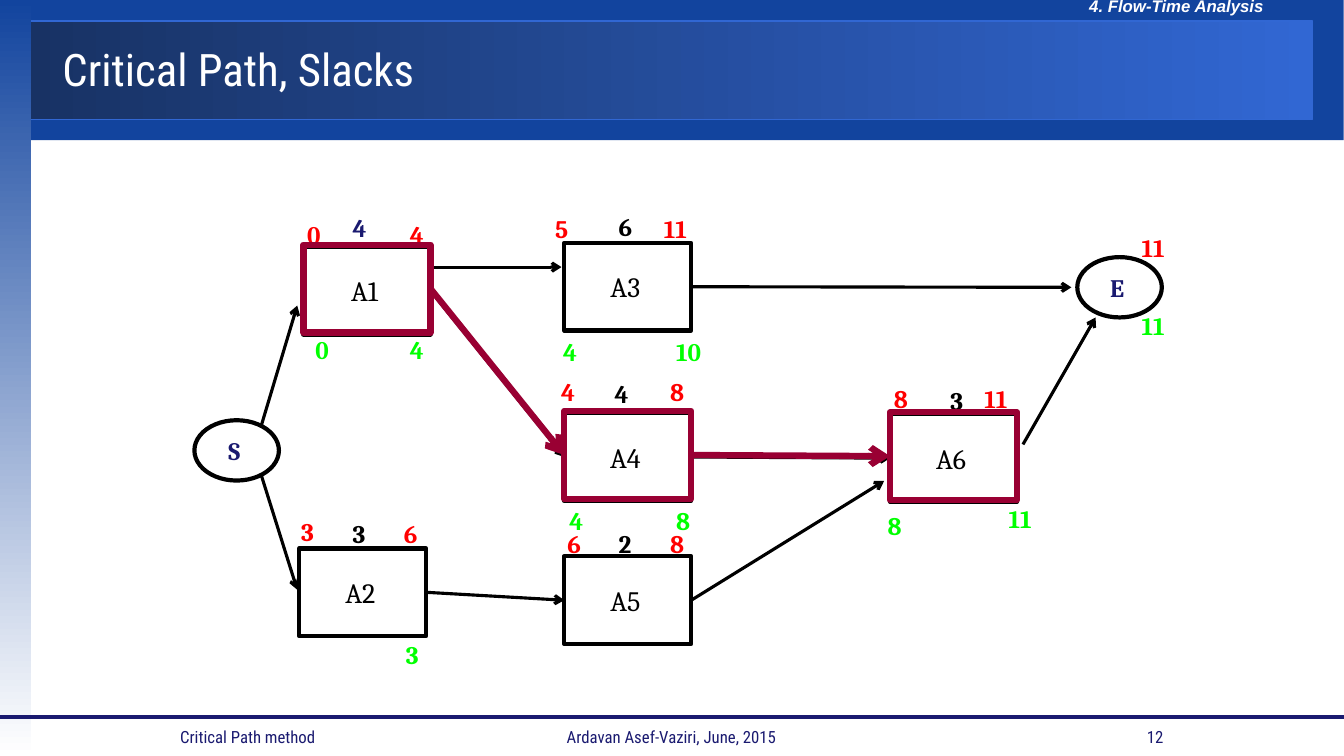
from lxml.etree import SubElement
from pptx import Presentation
from pptx.dml.color import RGBColor
from pptx.enum.shapes import MSO_CONNECTOR, MSO_SHAPE
from pptx.enum.text import MSO_ANCHOR, PP_ALIGN
from pptx.oxml.ns import qn
from pptx.util import Cm, Pt

BLUE = RGBColor(0x12, 0x44, 0x9E)
BANNER_DARK = RGBColor(0x18, 0x32, 0x64)
BANNER_LIGHT = RGBColor(0x31, 0x67, 0xD3)
NAVY = RGBColor(0x1A, 0x1A, 0x70)
WHITE = RGBColor(0xFF, 0xFF, 0xFF)
BLACK = RGBColor(0x00, 0x00, 0x00)
RED = RGBColor(0xFF, 0x00, 0x00)
GREEN = RGBColor(0x00, 0xFF, 0x00)
CRIMSON = RGBColor(0x99, 0x00, 0x33)

BODY_FONT = "Cambria"
TITLE_FONT = "Roboto Condensed"
BOX_SIZE = (3.2, 2.21)
EVENT_SIZE = (2.13, 1.52)
CRITICAL_RISE = 0.05

# Left and top of each activity and event, in cm
ACTIVITIES = {
    "A1": (7.65, 6.22), "A3": (14.22, 6.12), "A4": (14.22, 10.41),
    "A6": (22.43, 10.44), "A5": (14.22, 14.02), "A2": (7.54, 13.82),
}
CRITICAL_PATH = ["A1", "A4", "A6"]
EVENTS = {"S": (4.9, 10.59), "E": (27.15, 6.48)}

# Numbers around the activities: text, left, top
DURATIONS = [("3", 8.64, 12.93), ("6", 15.34, 5.21), ("4", 15.24, 9.42),
             ("2", 15.34, 13.18), ("3", 23.7, 9.58)]
FIRST_DURATION = [("4", 8.64, 5.23)]
BACKWARD_TIMES = [("0", 7.7, 8.31), ("4", 10.08, 8.31), ("3", 9.98, 15.98),
                  ("4", 14.1, 12.62), ("4", 13.94, 8.36), ("10", 16.79, 8.36),
                  ("8", 16.79, 12.62), ("8", 22.12, 12.73),
                  ("11", 25.17, 12.57), ("11", 28.52, 7.7)]
FORWARD_TIMES = [("11", 28.52, 5.72), ("11", 16.48, 5.26), ("5", 13.74, 5.26),
                 ("8", 22.28, 9.53), ("8", 16.64, 9.37), ("8", 16.64, 13.18),
                 ("4", 13.89, 9.37), ("6", 14.05, 13.18), ("6", 9.93, 12.93),
                 ("3", 7.34, 12.88), ("4", 10.08, 5.41), ("0", 7.49, 5.41),
                 ("11", 24.56, 9.53)]


def format_text(text_frame, text, font, size, colour, bold=False,
                italic=False, align=PP_ALIGN.LEFT, anchor=MSO_ANCHOR.TOP):
    text_frame.text = text
    text_frame.word_wrap = True
    text_frame.vertical_anchor = anchor
    paragraph = text_frame.paragraphs[0]
    paragraph.alignment = align
    run_font = paragraph.runs[0].font
    run_font.name, run_font.size = font, Pt(size)
    run_font.bold, run_font.italic = bold, italic
    run_font.color.rgb = colour


def add_text(slide, text, left, top, width, height, *style, **options):
    shape = slide.shapes.add_textbox(Cm(left), Cm(top), Cm(width), Cm(height))
    format_text(shape.text_frame, text, *style, **options)


def add_panel(slide, left, top, width, height, colours, angle=0, line=None):
    shape = slide.shapes.add_shape(MSO_SHAPE.RECTANGLE, Cm(left), Cm(top),
                                   Cm(width), Cm(height))
    shape.shadow.inherit = False
    if len(colours) == 1:
        shape.fill.solid()
        shape.fill.fore_color.rgb = colours[0]
    else:
        shape.fill.gradient()
        shape.fill.gradient_angle = angle
        for position, (stop, colour) in enumerate(
                zip(shape.fill.gradient_stops, colours)):
            stop.position = position
            stop.color.rgb = colour
    if line is None:
        shape.line.fill.background()
    else:
        shape.line.color.rgb = line
        shape.line.width = Pt(0.75)


def add_node(slide, kind, left, top, size, colour=BLACK, line_width=3):
    shape = slide.shapes.add_shape(kind, Cm(left), Cm(top), *map(Cm, size))
    shape.shadow.inherit = False
    shape.fill.background()
    shape.line.color.rgb = colour
    shape.line.width = Pt(line_width)
    return shape


def label_node(shape, text, size, colour, bold):
    frame = shape.text_frame
    frame.margin_top = frame.margin_bottom = 0
    frame.margin_left, frame.margin_right = 0, Cm(0.12)
    format_text(frame, text, BODY_FONT, size, colour, bold,
                align=PP_ALIGN.CENTER, anchor=MSO_ANCHOR.MIDDLE)


def add_line(slide, begin, end, colour, width):
    """Each end is a point in cm, or a box: lines leave right, enter left."""
    points = [(0, 0) if hasattr(stop, "shape_id") else stop
              for stop in (begin, end)]
    line = slide.shapes.add_connector(
        MSO_CONNECTOR.STRAIGHT, *[Cm(value) for point in points for value in point])
    if hasattr(begin, "shape_id"):
        line.begin_connect(begin, 3)
    if hasattr(end, "shape_id"):
        line.end_connect(end, 1)
    line.line.color.rgb = colour
    line.line.width = Pt(width)
    SubElement(line._element.spPr, qn("a:effectLst"))
    return line


def add_arrow(slide, begin, end, colour=BLACK, width=2.25):
    arrow = add_line(slide, begin, end, colour, width)
    SubElement(arrow.line._get_or_add_ln(), qn("a:tailEnd"), type="arrow")


def add_numbers(slide, numbers, colour):
    for text, left, top in numbers:
        width = 0.86 if len(text) == 1 else 1.37
        add_text(slide, text, left, top, width, 1.02, BODY_FONT, 18, colour,
                 bold=True)


def add_frame(slide):
    # Background bands and chapter name
    add_panel(slide, 0.66, 0, 33.2, 3.53, [BLUE])
    add_panel(slide, 0.66, 0.53, 32.41, 2.49, [BANNER_DARK, BANNER_LIGHT],
              line=BANNER_LIGHT)
    add_panel(slide, 0, 0, 0.79, 19.05, [BLUE, WHITE], angle=270)
    add_text(slide, "4. Flow-Time Analysis", 27.2, -0.23, 6.5, 0.76, "Arial",
             12, WHITE, bold=True, italic=True)

    # Title, brought in front of the bands
    title = slide.shapes.title
    title.left, title.top, title.width, title.height = map(
        Cm, (1.32, 0.53, 31.47, 2.39))
    format_text(title.text_frame, "Critical Path, Slacks", TITLE_FONT, 32,
                WHITE, anchor=MSO_ANCHOR.MIDDLE)
    slide.shapes._spTree.append(title._element)

    # Footer
    add_line(slide, (0, 18.06), (33.87, 18.06), NAVY, 3)
    for text, left, width, align in [
            ("Critical Path method", 4.29, 5.92, PP_ALIGN.LEFT),
            ("Ardavan Asef-Vaziri, June, 2015", 12.9, 8.05, PP_ALIGN.CENTER),
            ("12", 23.65, 5.92, PP_ALIGN.RIGHT)]:
        add_text(slide, text, left, 18.06, width, 1.02, TITLE_FONT, 12, NAVY,
                 align=align, anchor=MSO_ANCHOR.MIDDLE)


def add_network(slide):
    # Activities and events
    boxes = {}
    for name, (left, top) in ACTIVITIES.items():
        boxes[name] = add_node(slide, MSO_SHAPE.RECTANGLE, left, top, BOX_SIZE)
        label_node(boxes[name], name, 20, BLACK, False)
    for name, (left, top) in EVENTS.items():
        event = add_node(slide, MSO_SHAPE.OVAL, left, top, EVENT_SIZE)
        label_node(event, name, 18, NAVY, True)

    # Precedence arrows
    for begin, end in [
            ((10.85, 6.73), (14.15, 6.73)),
            (boxes["A1"], boxes["A4"]),
            (boxes["A2"], boxes["A5"]),
            (boxes["A4"], boxes["A6"]),
            (boxes["A5"], (22.28, 12.12)),
            (boxes["A3"], (27, 7.24)),
            ((25.78, 11.2), (27.61, 8)),
            ((6.58, 10.74), (7.49, 7.7)),
            ((6.58, 11.96), (7.49, 14.86))]:
        add_arrow(slide, begin, end)

    # Durations and times
    for numbers, colour in [(FIRST_DURATION, NAVY), (DURATIONS, BLACK),
                            (BACKWARD_TIMES, GREEN), (FORWARD_TIMES, RED)]:
        add_numbers(slide, numbers, colour)

    # Critical path
    critical = []
    for name in CRITICAL_PATH:
        left, top = ACTIVITIES[name]
        critical.append(add_node(slide, MSO_SHAPE.RECTANGLE, left,
                                 top - CRITICAL_RISE, BOX_SIZE, CRIMSON, 4.5))
    for begin, end in zip(critical, critical[1:]):
        add_arrow(slide, begin, end, CRIMSON, 4.5)


def main():
    presentation = Presentation()
    presentation.slide_width, presentation.slide_height = Cm(33.87), Cm(19.05)
    slide = presentation.slides.add_slide(presentation.slide_layouts[5])
    add_frame(slide)
    add_network(slide)
    presentation.save("out.pptx")


if __name__ == "__main__":
    main()
